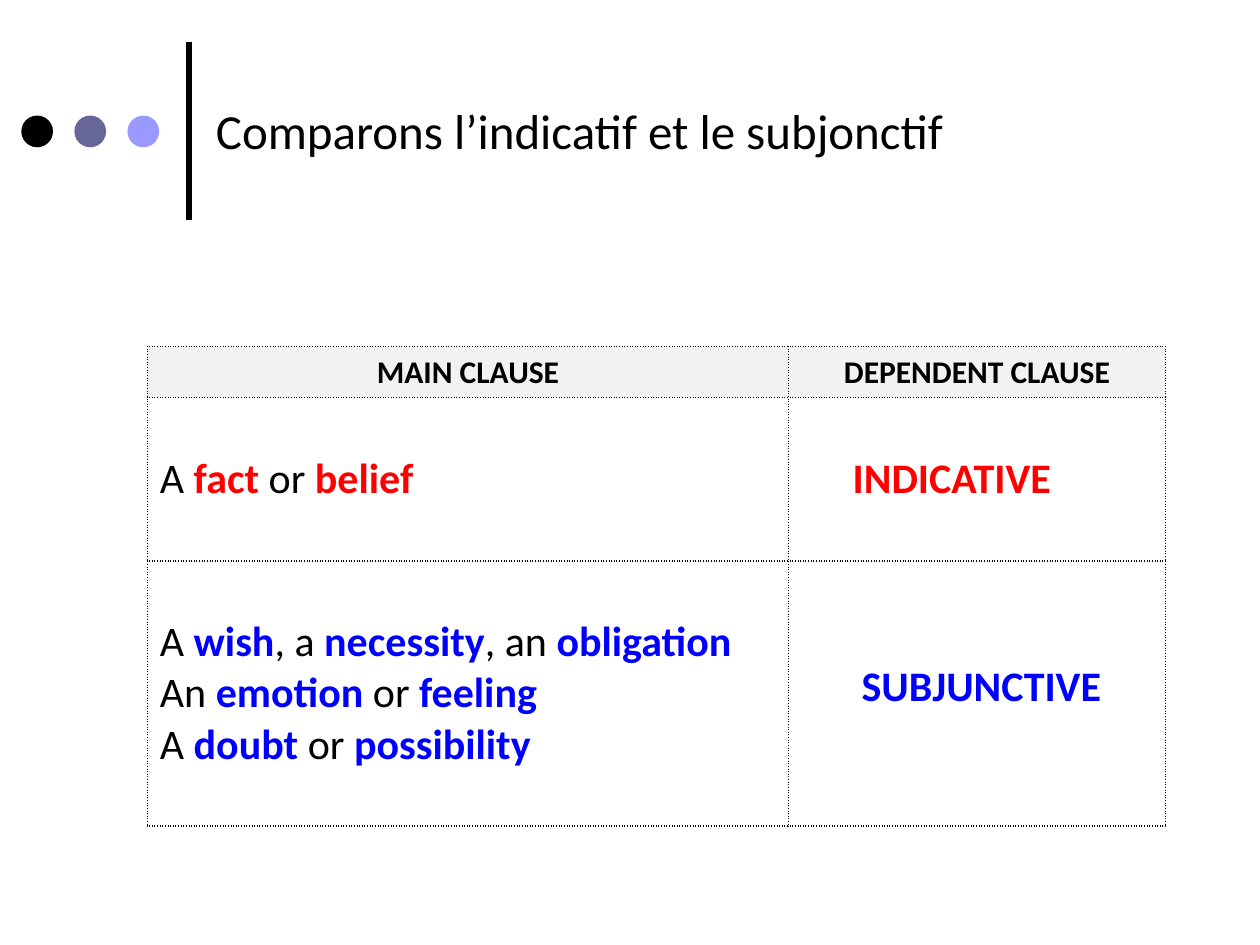
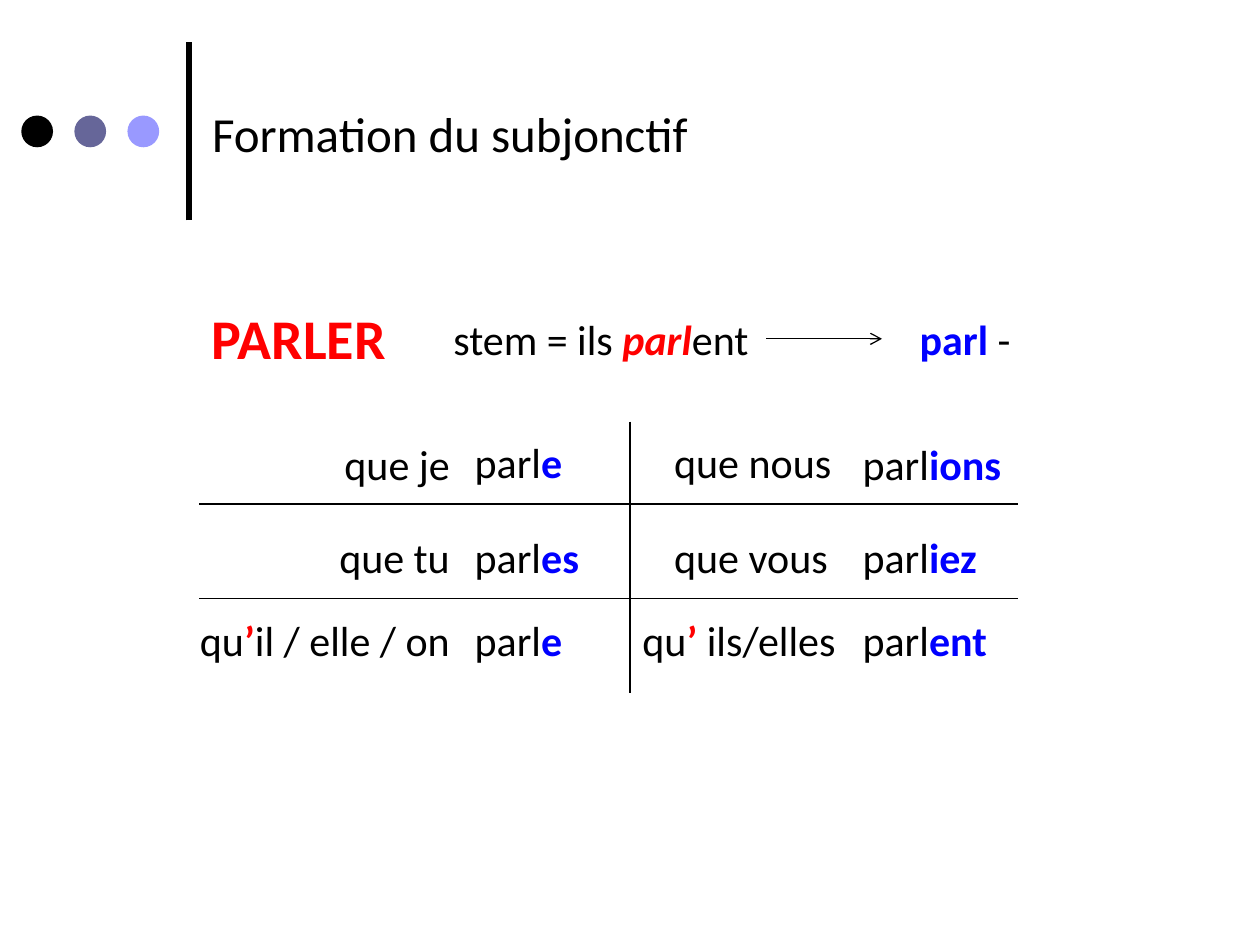
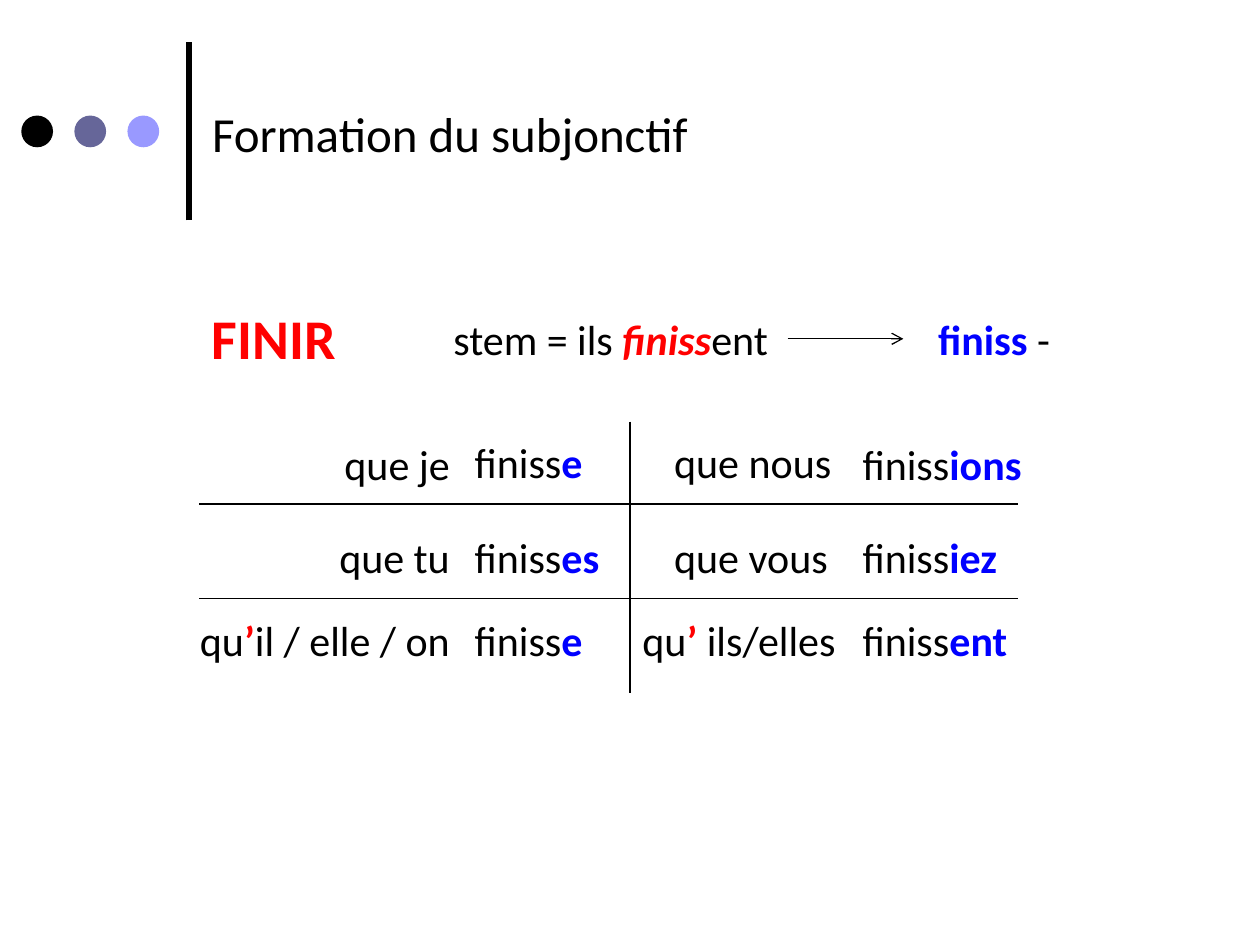
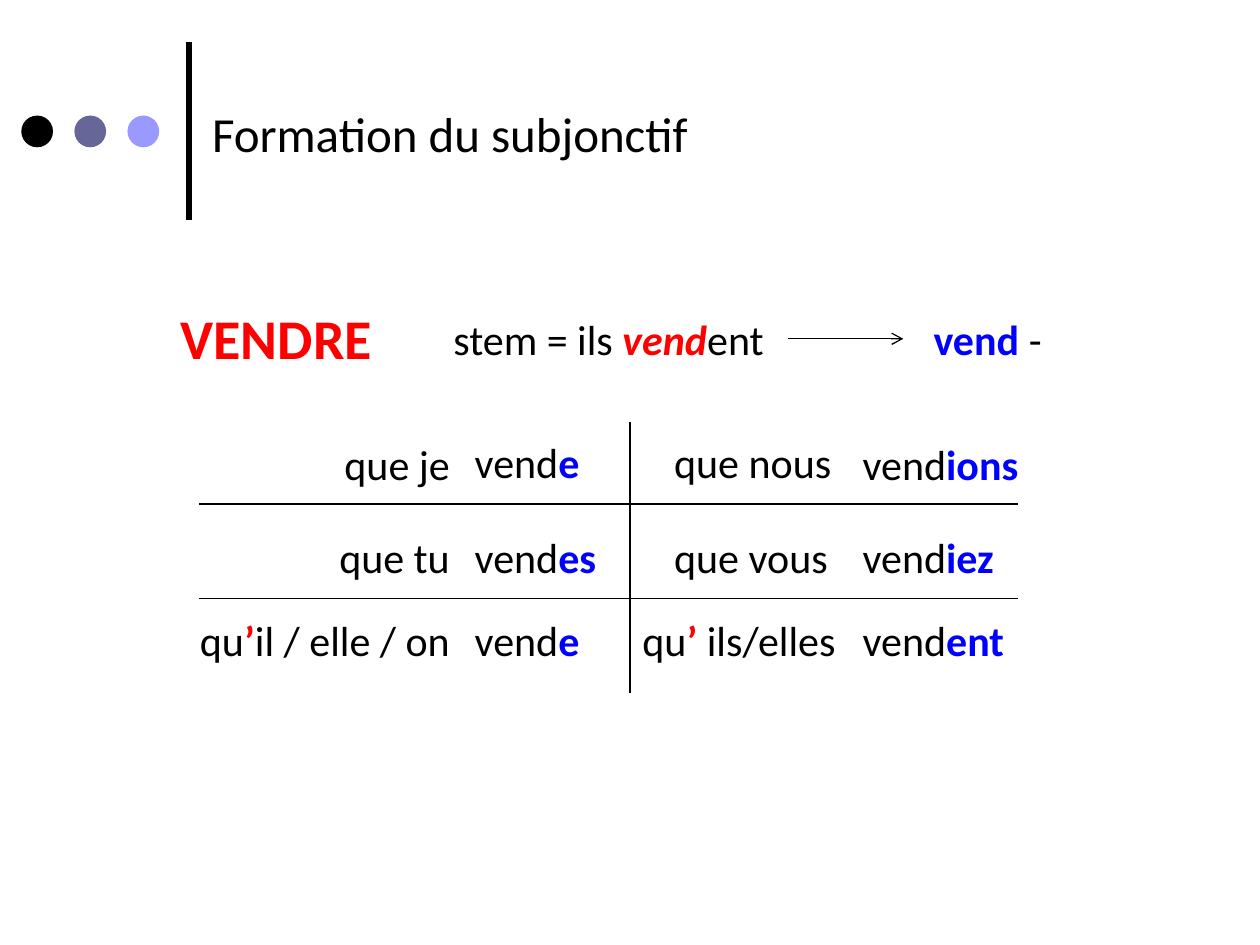
"""Builds four slides on the French subjunctive."""
from dataclasses import dataclass
from lxml import etree
from pptx import Presentation
from pptx.dml.color import RGBColor
from pptx.enum.shapes import MSO_CONNECTOR, MSO_SHAPE
from pptx.enum.text import MSO_ANCHOR, MSO_AUTO_SIZE, PP_ALIGN
from pptx.oxml import parse_xml
from pptx.oxml.ns import nsdecls, qn
from pptx.util import Cm, Pt

LEFT, MID, RIGHT = PP_ALIGN.LEFT, PP_ALIGN.CENTER, PP_ALIGN.RIGHT
TOP, MIDDLE = MSO_ANCHOR.TOP, MSO_ANCHOR.MIDDLE
GROW = MSO_AUTO_SIZE.SHAPE_TO_FIT_TEXT
OVAL, STRAIGHT = MSO_SHAPE.OVAL, MSO_CONNECTOR.STRAIGHT


@dataclass
class Theme:
    font: str = "Calibri"
    black: str = "000000"
    red: str = "FF0000"
    blue: str = "0000FF"
    slate: str = "666699"
    lilac: str = "9999FF"
    grey: str = "F2F2F2"
    title: int = 28
    verb: int = 32
    text: int = 24
    head: int = 18


theme = Theme()
styles = {
    "plain": (theme.black, False, False),
    "bold": (theme.black, True, False),
    "red": (theme.red, True, False),
    "blue": (theme.blue, True, False),
    "stem": (theme.red, True, True),
}


def write(frame, lines, size, align=LEFT):
    frame.word_wrap = True
    for i, line in enumerate(lines):
        para = frame.add_paragraph() if i else frame.paragraphs[0]
        para.alignment = align
        for text, style in line:
            run = para.add_run()
            run.text = text
            font = run.font
            color, font.bold, font.italic = styles[style]
            font.color.rgb = RGBColor.from_string(color)
            font.name, font.size = theme.font, Pt(size)


def rule(slide, x1, y1, x2, y2, weight=0.75):
    line = slide.shapes.add_connector(STRAIGHT, Cm(x1), Cm(y1), Cm(x2), Cm(y2))
    line.line.color.rgb = RGBColor.from_string(theme.black)
    line.line.width = Pt(weight)
    etree.SubElement(line.element.spPr, qn("a:effectLst"))
    return line


deck = Presentation()
deck.slide_width, deck.slide_height = Cm(25.4), Cm(19.05)
layout = deck.slide_layouts[5]
titles = ["Comparons l’indicatif et le subjonctif"] + ["Formation du subjonctif"] * 3
slides = []
for i, name in enumerate(titles):
    slide = deck.slides.add_slide(layout)
    title = slide.shapes.title
    left, top = (4.02, 1.96) if i else (4.1, 1.9)
    title.left, title.top, title.width, title.height = Cm(left), Cm(top), Cm(24.76 - left), Cm(1.45)
    frame = title.text_frame
    write(frame, [[(name, "plain")]], theme.title)
    frame.vertical_anchor, frame.auto_size = TOP, GROW
    slides.append(slide)

first = slides[0]
marks = [rule(first, 3.81, 4.44, 3.81, 0.85, 3)]
for i, color in enumerate((theme.black, theme.slate, theme.lilac)):
    dot = first.shapes.add_shape(OVAL, Cm(0.43 + 1.07 * i), Cm(2.33), Cm(0.64), Cm(0.64))
    dot.shadow.inherit = False
    dot.fill.solid()
    dot.fill.fore_color.rgb = RGBColor.from_string(color)
    dot.line.fill.background()
    marks.append(dot)
for mark in marks:
    layout.shapes.element.append(mark.element)

facts = [[("A ", "plain"), ("fact", "red"), (" or ", "plain"), ("belief", "red")]]
moods = [
    [("A ", "plain"), ("wish", "blue"), (", a ", "plain"), ("necessity", "blue"),
     (", an ", "plain"), ("obligation", "blue")],
    [("An ", "plain"), ("emotion", "blue"), (" or ", "plain"), ("feeling", "blue")],
    [("A ", "plain"), ("doubt", "blue"), (" or ", "plain"), ("possibility", "blue")],
]
heads = [[[("MAIN CLAUSE", "bold")]], [[("DEPENDENT CLAUSE", "bold")]]]
rows = [heads, [facts, []], [moods, []]]
table = first.shapes.add_table(3, 2, Cm(2.97), Cm(6.99), Cm(20.52), Cm(9.66)).table
table.horz_banding = False
for col, width in zip(table.columns, (12.93, 7.59)):
    col.width = Cm(width)
for row, height in zip(table.rows, (1.02, 3.3, 5.34)):
    row.height = Cm(height)
for r, row in enumerate(rows):
    for c, lines in enumerate(row):
        cell = table.cell(r, c)
        props = cell._tc.get_or_add_tcPr()
        for side in ("lnL", "lnR", "lnT", "lnB"):
            props.append(parse_xml(
                f'<a:{side} {nsdecls("a")} w="12700"><a:solidFill><a:srgbClr val="{theme.black}"/>'
                f'</a:solidFill><a:prstDash val="sysDot"/></a:{side}>'))
        if r:
            cell.fill.background()
        else:
            cell.fill.solid()
            cell.fill.fore_color.rgb = RGBColor.from_string(theme.grey)
        cell.vertical_anchor = MIDDLE
        write(cell.text_frame, lines, theme.text if r else theme.head, LEFT if r else MID)

for left, top, width, word, style, align in (
    (16.94, 8.97, 5.18, "INDICATIVE", "red", LEFT),
    (16.71, 13.18, 6.15, "SUBJUNCTIVE", "blue", MID),
):
    box = first.shapes.add_textbox(Cm(left), Cm(top), Cm(width), Cm(2.06))
    write(box.text_frame, [[(word, style)]], theme.text, align)
    box.text_frame.auto_size = GROW

subjects = [
    (5.51, 8.71, 3.81, [("que je", "plain")], RIGHT),
    (5.08, 10.59, 4.24, [("que tu", "plain")], RIGHT),
    (2.12, 12.27, 7.2, [("qu", "plain"), ("’", "red"), ("il / elle / on", "plain")], RIGHT),
    (13.34, 8.68, 4.88, [("que nous", "plain")], LEFT),
    (13.34, 10.59, 4.24, [("que vous", "plain")], LEFT),
    (12.7, 12.27, 5.08, [("qu", "plain"), ("’ ", "red"), ("ils/elles", "plain")], LEFT),
]
endings = [
    (9.32, 8.68, 4.24, "e"), (9.32, 10.59, 3.81, "es"), (9.32, 12.27, 3.71, "e"),
    (17.14, 8.71, 5.08, "ions"), (17.14, 10.59, 5.08, "iez"), (17.14, 12.27, 5.28, "ent"),
]
verbs = [
    ("PARLER", "parl", 4.02, 15.45, 9.4),
    ("FINIR", "finiss", 4.02, 15.88, 9.77),
    ("VENDRE", "vend", 3.39, 15.88, 9.68),
]
for slide, (verb, stem, start, arrow, stop) in zip(slides[1:], verbs):
    for y in (10.16, 12.06):
        rule(slide, 4.02, y, 20.53, y)
    rule(slide, 12.7, 8.5, 12.7, 13.97)
    origin = [("stem = ils ", "plain"), (stem, "stem"), ("ent\t", "plain"),
              (stem, "blue"), (" -", "plain")]
    boxes = [(start, 6, 8.66 - start, [(verb, "red")], LEFT)] + subjects
    boxes += [(x, y, w, [(stem, "plain"), (end, "blue")], LEFT) for x, y, w, end in endings]
    boxes.append((8.89, 6.19, 14.4, origin, LEFT))
    for left, top, width, runs, align in boxes:
        size = theme.verb if runs[0][0] == verb else theme.text
        height = 1.63 if size == theme.verb else 1.28
        box = slide.shapes.add_textbox(Cm(left), Cm(top), Cm(width), Cm(height))
        write(box.text_frame, [runs], size, align)
        box.text_frame.auto_size = GROW
    props = box.text_frame.paragraphs[0]._p.get_or_add_pPr()
    tabs = etree.SubElement(props, qn("a:tabLst"))
    etree.SubElement(tabs, qn("a:tab"), pos=str(Cm(stop)), algn="l")
    pointer = rule(slide, arrow, 6.83, arrow + 2.33, 6.83)
    etree.SubElement(pointer.line._get_or_add_ln(), qn("a:tailEnd"), type="arrow")

deck.save("out.pptx")
